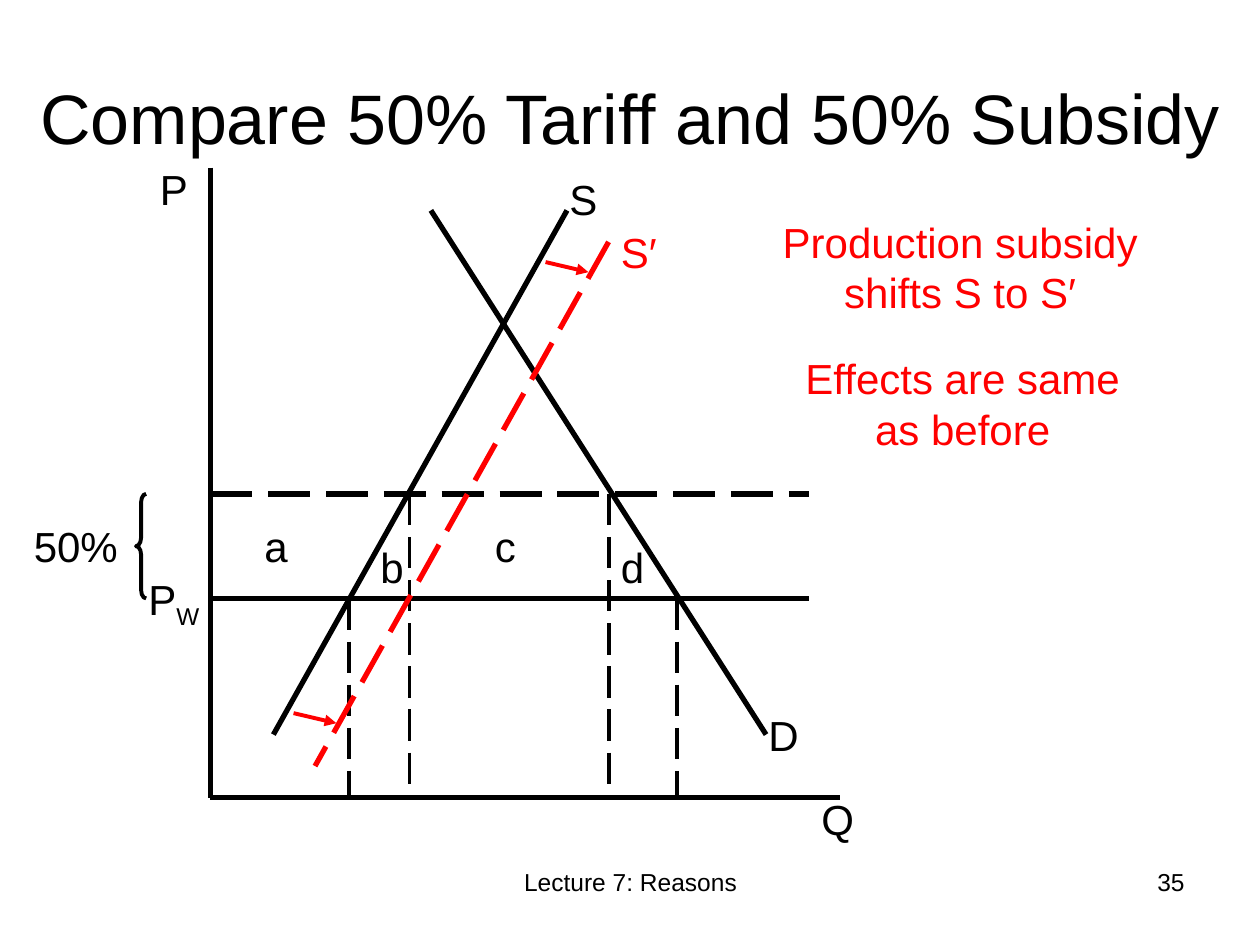
from lxml import etree
from pptx import Presentation
from pptx.dml.color import RGBColor
from pptx.enum.dml import MSO_LINE
from pptx.enum.shapes import MSO_CONNECTOR, MSO_SHAPE
from pptx.enum.text import MSO_ANCHOR, MSO_AUTO_SIZE, PP_ALIGN
from pptx.oxml.ns import qn
from pptx.util import Inches, Pt

STRAIGHT = MSO_CONNECTOR.STRAIGHT
LEFT_BRACE = MSO_SHAPE.LEFT_BRACE
LONG_DASH = MSO_LINE.LONG_DASH
MIDDLE = MSO_ANCHOR.MIDDLE
NO_FIT = MSO_AUTO_SIZE.NONE
LEFT, CENTER, RIGHT = PP_ALIGN.LEFT, PP_ALIGN.CENTER, PP_ALIGN.RIGHT
FONT = "Arial"
BLACK, RED = "000000", "FF0000"


def color(hex_value):
    """Turn a hex string into a colour."""
    return RGBColor.from_string(hex_value)


def format_text(run, size, hex_value):
    """Give a run the slide's font."""
    for name, value in {"name": FONT, "size": Pt(size)}.items():
        setattr(run.font, name, value)
    run.font.color.rgb = color(hex_value)


def add_text(slide, box, text, size=24, hex_value=BLACK, align=LEFT, subscript=""):
    """Add a wrapped text box, with an optional subscript after the text."""
    label = slide.shapes.add_textbox(*map(Inches, box))
    label.text_frame.word_wrap = True
    paragraph = label.text_frame.paragraphs[0]
    paragraph.alignment = align
    for part in filter(None, (text, subscript)):
        run = paragraph.add_run()
        run.text = part
        format_text(run, size, hex_value)
    if subscript:
        run.font._element.set("baseline", "-25000")


def add_line(slide, start, end, width=3, hex_value=BLACK, dash=None, arrow=False):
    """Draw a straight line, dashed or with an arrowhead if asked."""
    line = slide.shapes.add_connector(STRAIGHT, *map(Inches, (*start, *end)))
    line.line.color.rgb = color(hex_value)
    line.line.width = Pt(width)
    if dash:
        line.line.dash_style = dash
    if arrow:
        etree.SubElement(line.line._get_or_add_ln(), qn("a:tailEnd"), type="triangle")
    etree.SubElement(line._element.spPr, qn("a:effectLst"))


def add_title(slide, box, text):
    """Move, fill and format the title placeholder."""
    title = slide.shapes.title
    for name, value in zip(("left", "top", "width", "height"), box):
        setattr(title, name, Inches(value))
    frame = title.text_frame
    frame.text = text
    for name, value in {"auto_size": NO_FIT, "vertical_anchor": MIDDLE,
                        "word_wrap": True}.items():
        setattr(frame, name, value)
    frame.paragraphs[0].alignment = CENTER
    format_text(frame.paragraphs[0].runs[0], 40, BLACK)


def add_market_diagram(slide, box):
    """Draw supply, demand, prices and welfare areas within the axes' box."""
    left, top, width, height = box
    world, tariff, price_end = 3.42, 2.59, 4.75
    supply_top, supply_foot = (2.83, 0.34), (0.5, 4.5)
    shift_x, shift_y = 0.33, 0.25

    def at(x, y):
        return left + x, top + y

    def shifted(point):
        return at(point[0] + shift_x, point[1] + shift_y)

    for start, end in (
        ((0, 0), (0, height)),
        ((0, height), (width, height)),
        (supply_top, supply_foot),
        ((1.75, 0.34), (4.41, 4.5)),
        ((0, world), (price_end, world)),
    ):
        add_line(slide, at(*start), at(*end))
    add_line(slide, at(0, tariff), at(price_end, tariff), dash=LONG_DASH)
    for quantity, price in ((1.1, world), (3.7, world), (1.58, tariff), (3.16, tariff)):
        add_line(slide, at(quantity, price), at(quantity, height), 2.25, dash=LONG_DASH)

    add_line(slide, shifted(supply_top), shifted(supply_foot),
             hex_value=RED, dash=LONG_DASH)
    for x, y in ((2.66, 0.75), (0.66, 4.33)):
        add_line(slide, at(x, y), at(x + 0.34, y + 0.08), 2.25, RED, arrow=True)

    brace = slide.shapes.add_shape(
        LEFT_BRACE, *map(Inches, (*at(-0.59, tariff), 0.08, world - tariff)))
    brace.adjustments[0] = 0.83
    brace.shadow.inherit = False
    brace.fill.background()
    brace.line.color.rgb = color(BLACK)
    brace.line.width = Pt(2.25)

    for text, x, y in (
        ("S", 2.75, 0), ("D", 4.33, 4.25), ("P", -0.5, -0.08), ("Q", 4.75, 4.92),
        ("a", 0.33, 2.75), ("b", 1.25, 2.92), ("c", 2.16, 2.75), ("d", 3.16, 2.92),
    ):
        add_text(slide, (*at(x, y), 0.58, 0.5), text)
    add_text(slide, (*at(3.16, 0.42), 0.58, 0.5), "S′", hex_value=RED)
    add_text(slide, (*at(-0.59, 3.17), 0.67, 0.5), "P", subscript="W")
    add_text(slide, (*at(-1.5, 2.75), 1, 0.5), "50%")


def add_remarks(slide, box):
    """Stack the two remarks on the subsidy in the given box."""
    left, top, width, height = box
    remark_height = 0.9
    add_text(slide, (left, top, width, remark_height),
             "Production subsidy shifts S to S′", hex_value=RED, align=CENTER)
    add_text(slide, (left + 0.02, top + height - remark_height, width, remark_height),
             "Effects are same as before", hex_value=RED, align=CENTER)


def add_footer(slide, box):
    """Place the lecture name and the page number along the given strip."""
    left, top, width, height = box
    number_width = 2.33
    add_text(slide, (left, top, 3.17, height), "Lecture 7: Reasons", 14, align=CENTER)
    add_text(slide, (left + width - number_width, top, number_width, height),
             "35", 14, align=RIGHT)


def main():
    """Build and save the slide."""
    deck = Presentation()
    deck.slide_width, deck.slide_height = Inches(10), Inches(7.5)
    slide = deck.slides.add_slide(deck.slide_layouts[5])
    add_title(slide, (0, 0.3, 10, 1.25), "Compare 50% Tariff and 50% Subsidy")
    add_market_diagram(slide, (1.67, 1.33, 5, 5))
    add_remarks(slide, (6.08, 1.67, 3.08, 1.98))
    add_footer(slide, (3.42, 6.83, 6.08, 0.52))
    deck.save("out.pptx")


if __name__ == "__main__":
    main()
